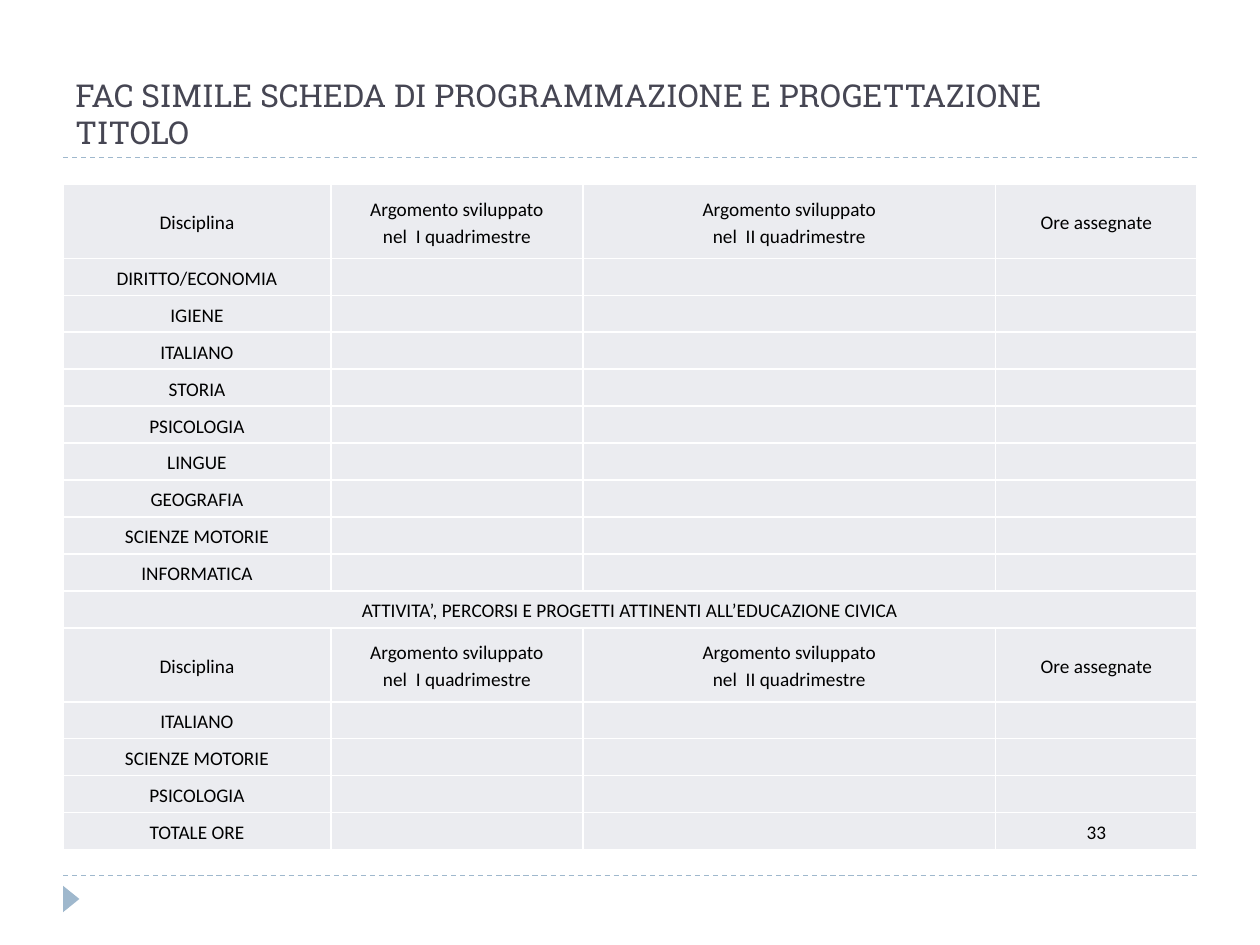
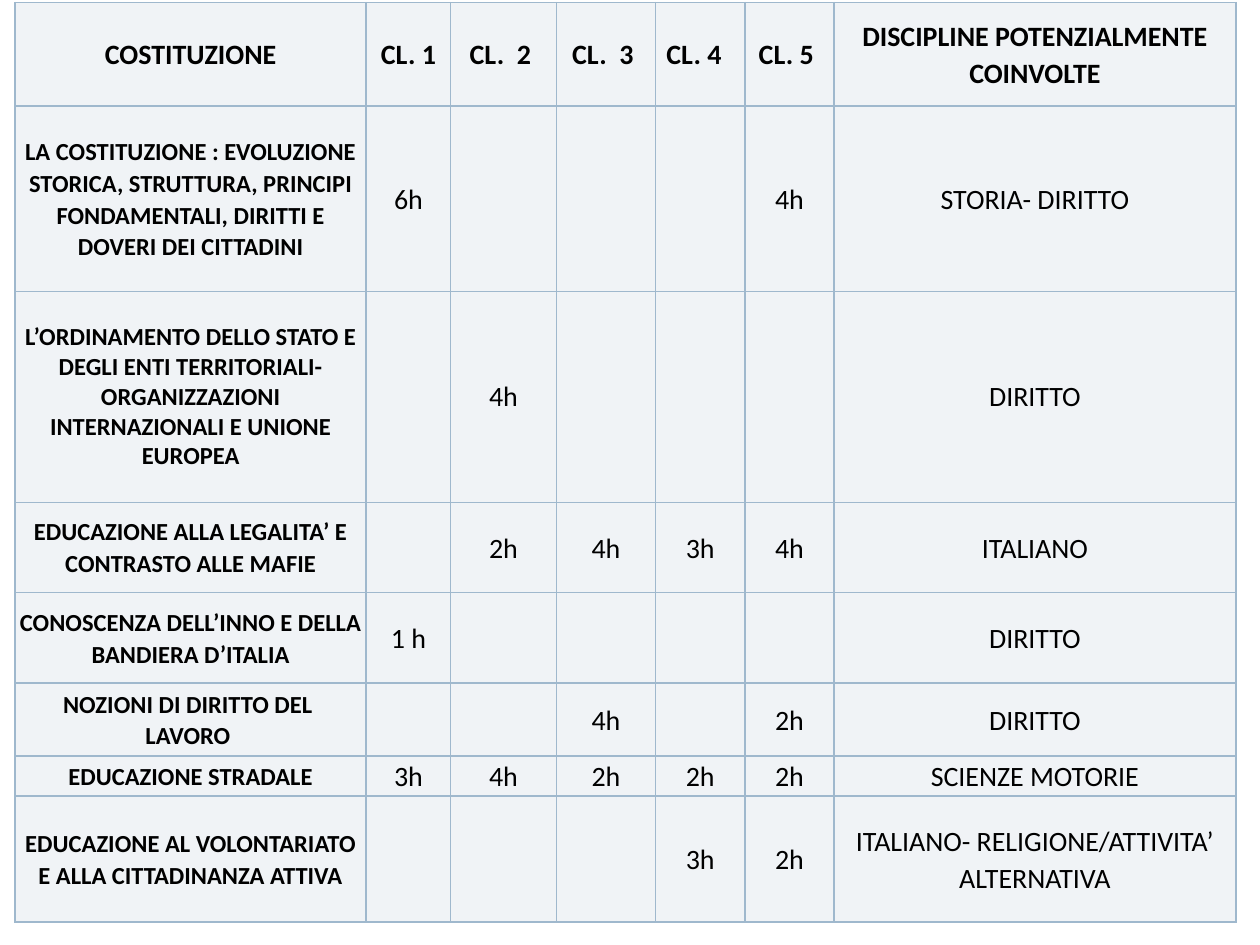
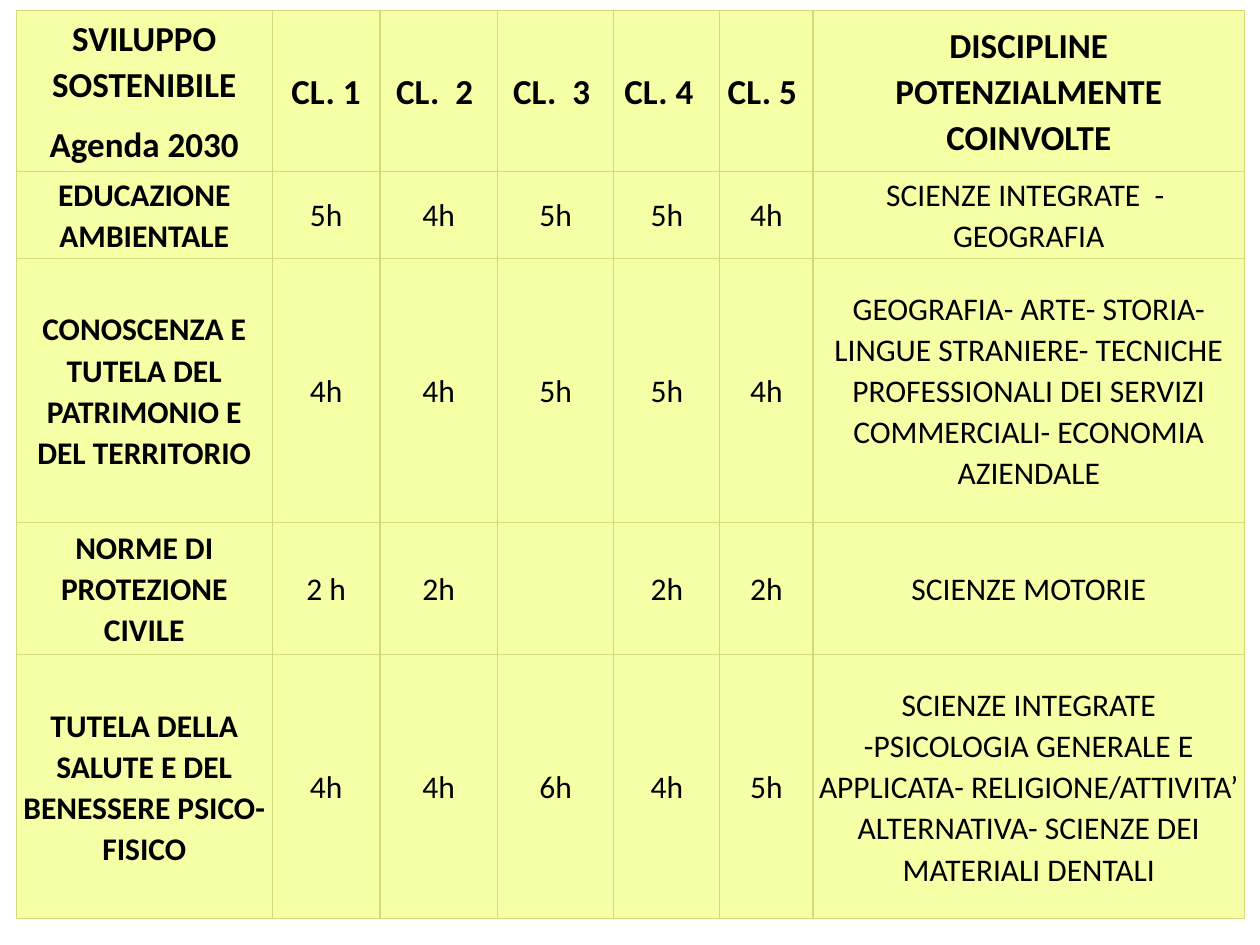
from dataclasses import dataclass
from typing import Any

from lxml import etree
from pptx import Presentation
from pptx.dml.color import RGBColor
from pptx.enum.dml import MSO_LINE
from pptx.enum.shapes import MSO_CONNECTOR, MSO_SHAPE
from pptx.enum.text import MSO_ANCHOR, PP_ALIGN
from pptx.oxml.ns import qn
from pptx.util import Pt

DASH = MSO_LINE.DASH
LINE = MSO_CONNECTOR.STRAIGHT
WEDGE = MSO_SHAPE.ISOSCELES_TRIANGLE
MID, LOW = MSO_ANCHOR.MIDDLE, MSO_ANCHOR.BOTTOM
CENTER = PP_ALIGN.CENTER

PX = 3048  # 300 px to the inch
HEX = {
    "ink": "000000", "title": "464653", "rule": "9FB8CD", "white": "FFFFFF",
    "grey": "EBECF0", "ice": "F0F3F6", "lime": "F5FFA6", "olive": "D2DA7A",
}
HEAD_FONT, BODY_FONT = "Roboto Slab", "Calibri"


@dataclass(frozen=True)
class Grid:
    """A table: its place, its look and its text."""
    left: int
    top: int
    cols: list[int]
    rows: list[int]
    fill: str
    edge: str
    width: float
    sizes: tuple[int, int, int]  # head row, first column, other cells
    bold: bool
    lead: float
    pad: int
    head_pad: int
    cells: list[list[str]]
    gap: int = 0
    wide: int = -1  # row merged across all columns
    tight: int = -1  # row with single line spacing


def color(name: str) -> RGBColor:
    return RGBColor.from_string(HEX[name])


def assign(item: Any, values: dict[str, Any]) -> None:
    for key, value in values.items():
        setattr(item, key, value)


def style(run: Any, size: int, font: str, ink: str, bold: bool = False) -> None:
    assign(run.font, {"size": Pt(size), "name": font, "bold": bold})
    run.font.color.rgb = color(ink)


def rule(slide: Any, y: int) -> None:
    line = slide.shapes.add_connector(LINE, 150 * PX, y * PX, 2850 * PX, y * PX)
    line.line.color.rgb = color("rule")
    assign(line.line, {"width": Pt(0.75), "dash_style": DASH})
    etree.SubElement(line._element.spPr, qn("a:effectLst"))


def frame(slide: Any) -> None:
    """Dashed rules and the footer wedge."""
    for y in (2085, 375):
        rule(slide, y)
    wedge = slide.shapes.add_shape(WEDGE, 138 * PX, 2121 * PX, 63 * PX, 39 * PX)
    wedge.rotation = 90
    wedge.shadow.inherit = False
    wedge.fill.solid()
    wedge.fill.fore_color.rgb = color("rule")
    wedge.line.fill.background()


def title(slide: Any, lines: list[str]) -> None:
    box = slide.shapes.add_textbox(150 * PX, 51 * PX, 2700 * PX, 324 * PX)
    assign(box.text_frame, {"word_wrap": True, "vertical_anchor": LOW})
    para = box.text_frame.paragraphs[0]
    for i, text in enumerate(lines):
        if i:
            para.add_line_break()
        run = para.add_run()
        run.text = text
        style(run, 18, HEAD_FONT, "title")


def border(cell: Any, edge: str, width: float) -> None:
    props = cell._tc.get_or_add_tcPr()
    for i, side in enumerate(("lnL", "lnR", "lnT", "lnB")):
        line = etree.Element(qn(f"a:{side}"), w=str(Pt(width)))
        fill = etree.SubElement(line, qn("a:solidFill"))
        etree.SubElement(fill, qn("a:srgbClr"), val=HEX[edge])
        props.insert(i, line)


def write(cell: Any, grid: Grid, row: int, col: int, text: str) -> None:
    pad = grid.head_pad if row == 0 and col else grid.pad
    assign(cell, {
        "vertical_anchor": MID, "margin_left": pad * PX,
        "margin_right": pad * PX, "margin_top": 0, "margin_bottom": 0,
    })
    size = grid.sizes[0 if row == 0 else 1 if col == 0 else 2]
    bold = grid.bold and (row == 0 or col == 0)
    lead = 1.0 if row == grid.tight else grid.lead
    for i, part in enumerate(text.split("\n")):
        para = cell.text_frame.add_paragraph() if i else cell.text_frame.paragraphs[0]
        assign(para, {"alignment": CENTER, "line_spacing": lead})
        if i:
            para.space_before = Pt(grid.gap)
        if part:
            run = para.add_run()
            run.text = part
            style(run, size, BODY_FONT, "ink", bold)
        else:  # keeps empty rows low
            etree.SubElement(para._p, qn("a:endParaRPr"), sz=str(size * 100))


def draw(slide: Any, grid: Grid) -> None:
    shape = slide.shapes.add_table(
        len(grid.rows), len(grid.cols), grid.left * PX, grid.top * PX,
        sum(grid.cols) * PX, sum(grid.rows) * PX)
    table = shape.table
    assign(table, {"first_row": False, "horz_banding": False})
    for col, width in zip(table.columns, grid.cols):
        col.width = width * PX
    for row, height in zip(table.rows, grid.rows):
        row.height = height * PX
    for r, texts in enumerate(grid.cells):
        for c in range(len(grid.cols)):
            cell = table.cell(r, c)
            cell.fill.solid()
            cell.fill.fore_color.rgb = color(grid.fill)
            border(cell, grid.edge, grid.width)
            write(cell, grid, r, c, texts[c] if c < len(texts) else "")
    if grid.wide >= 0:
        last = len(grid.cols) - 1
        table.cell(grid.wide, 0).merge(table.cell(grid.wide, last))


# Text shared by the tables
PLAN_HEAD = [
    "Disciplina", "Argomento sviluppato\nnel  I quadrimestre",
    "Argomento sviluppato\nnel  II quadrimestre", "Ore assegnate",
]
YEARS = ["CL. 1", "CL.  2 ", "CL.  3 ", "CL. 4  ", "CL. 5 "]
LAST = "DISCIPLINE POTENZIALMENTE COINVOLTE"

PLAN = Grid(
    left=150, top=439, cols=[638, 600, 983, 479],
    rows=[176] + [88] * 10 + [176] + [88] * 4,
    fill="grey", edge="white", width=1, sizes=(11, 11, 11), bold=False,
    lead=1.15, pad=21, head_pad=21, wide=10,
    cells=[
        PLAN_HEAD,
        *[[name] for name in (
            "DIRITTO/ECONOMIA", "IGIENE", "ITALIANO", "STORIA", "PSICOLOGIA",
            "LINGUE", "GEOGRAFIA", "SCIENZE MOTORIE", "INFORMATICA",
            "ATTIVITA’, PERCORSI E PROGETTI ATTINENTI ALL’EDUCAZIONE CIVICA")],
        PLAN_HEAD,
        *[[name] for name in ("ITALIANO", "SCIENZE MOTORIE", "PSICOLOGIA")],
        ["TOTALE ORE", "", "", "33"],
    ])

LAW = Grid(
    left=36, top=6, cols=[836, 201, 252, 236, 213, 212, 957],
    rows=[246, 442, 502, 215, 216, 173, 96, 300],
    fill="ice", edge="rule", width=1, sizes=(16, 14, 16), bold=True,
    lead=1.07, pad=8, head_pad=6, tight=2,
    cells=[
        ["COSTITUZIONE", *YEARS, LAST],
        ["LA COSTITUZIONE : EVOLUZIONE STORICA, STRUTTURA, PRINCIPI "
         "FONDAMENTALI, DIRITTI E DOVERI DEI CITTADINI",
         "6h", "", "", "", "4h", "STORIA- DIRITTO"],
        ["L’ORDINAMENTO DELLO STATO E DEGLI ENTI TERRITORIALI-ORGANIZZAZIONI "
         "INTERNAZIONALI E UNIONE EUROPEA", "", "4h", "", "", "", "DIRITTO"],
        ["EDUCAZIONE ALLA LEGALITA’ E CONTRASTO ALLE MAFIE",
         "", "2h", "4h", "3h", "4h", "ITALIANO"],
        ["CONOSCENZA DELL’INNO E DELLA BANDIERA D’ITALIA",
         "1 h", "", "", "", "", "DIRITTO"],
        ["NOZIONI DI DIRITTO DEL  LAVORO ", "", "", "4h", "", "2h", "DIRITTO"],
        ["EDUCAZIONE STRADALE", "3h", "4h", "2h", "2h", "2h", "SCIENZE MOTORIE"],
        ["EDUCAZIONE AL VOLONTARIATO E ALLA CITTADINANZA ATTIVA",
         "", "", "", "3h", "2h", "ITALIANO- RELIGIONE/ATTIVITA’ ALTERNATIVA"],
    ])

GREEN = Grid(
    left=39, top=24, cols=[609, 257, 279, 278, 252, 222, 1028],
    rows=[384, 207, 630, 313, 630],
    fill="lime", edge="olive", width=0.75, sizes=(20, 18, 18), bold=True,
    lead=1.07, pad=13, head_pad=6, gap=8,
    cells=[
        ["SVILUPPO SOSTENIBILE\nAgenda 2030", *YEARS, LAST],
        ["EDUCAZIONE AMBIENTALE", "5h", "4h", "5h", "5h", "4h",
         "SCIENZE INTEGRATE  -  GEOGRAFIA"],
        ["CONOSCENZA E TUTELA DEL PATRIMONIO E DEL TERRITORIO",
         "4h", "4h", "5h", "5h", "4h",
         "GEOGRAFIA- ARTE- STORIA-LINGUE STRANIERE- TECNICHE PROFESSIONALI "
         "DEI SERVIZI COMMERCIALI- ECONOMIA AZIENDALE"],
        ["NORME DI PROTEZIONE CIVILE", "2 h", "2h", "", "2h", "2h",
         "SCIENZE MOTORIE"],
        ["TUTELA DELLA SALUTE E DEL BENESSERE PSICO-FISICO",
         "4h", "4h", "6h", "4h", "5h",
         "SCIENZE INTEGRATE -PSICOLOGIA GENERALE E APPLICATA- "
         "RELIGIONE/ATTIVITA’ ALTERNATIVA- SCIENZE DEI MATERIALI DENTALI"],
    ])


def main() -> None:
    deck = Presentation()
    assign(deck, {"slide_width": 3000 * PX, "slide_height": 2250 * PX})
    blank = deck.slide_layouts[6]
    for grid in (PLAN, LAW, GREEN):
        slide = deck.slides.add_slide(blank)
        frame(slide)
        if grid is PLAN:
            title(slide, ["FAC SIMILE SCHEDA DI PROGRAMMAZIONE E PROGETTAZIONE",
                          "TITOLO"])
        draw(slide, grid)
    deck.save("out.pptx")


if __name__ == "__main__":
    main()
